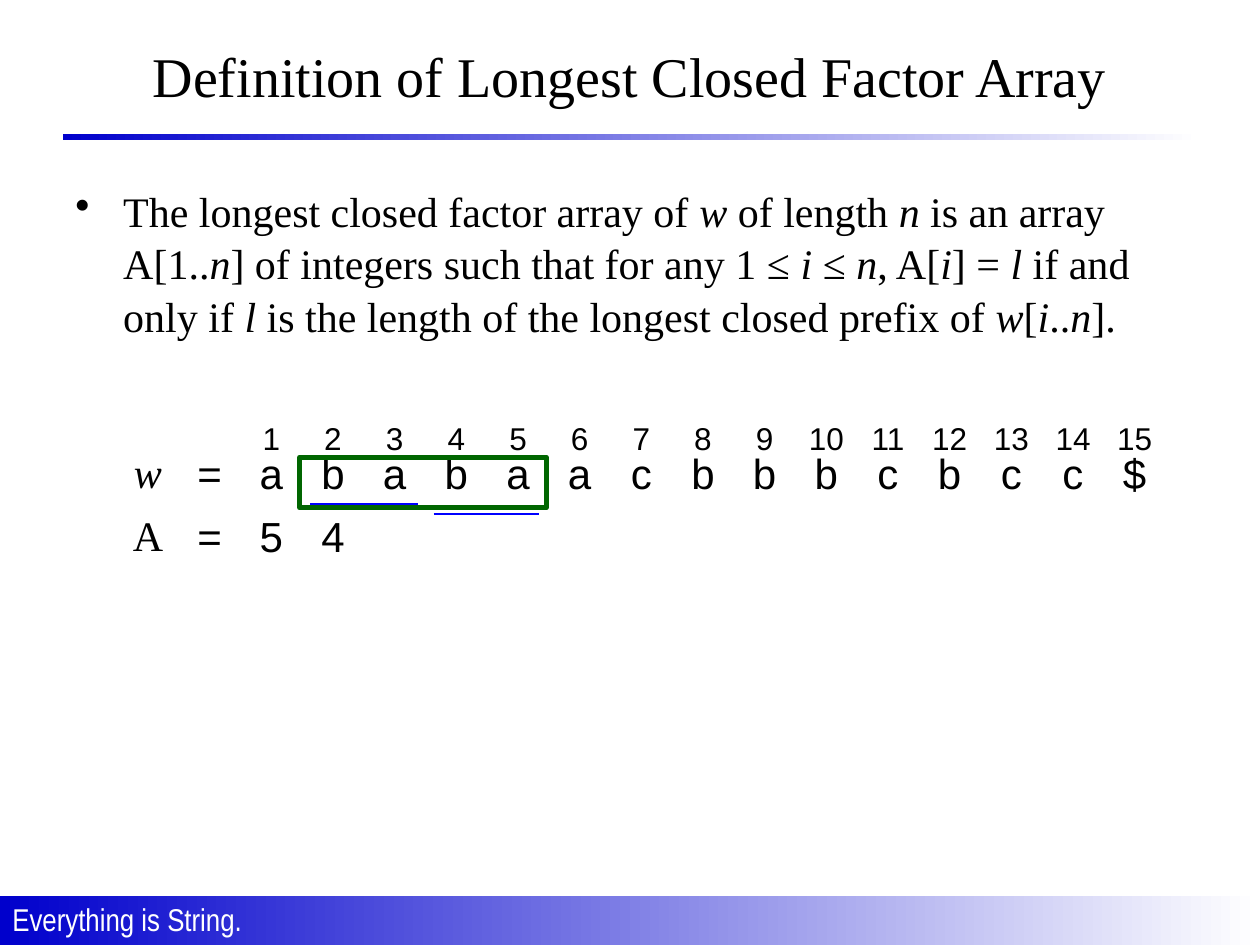
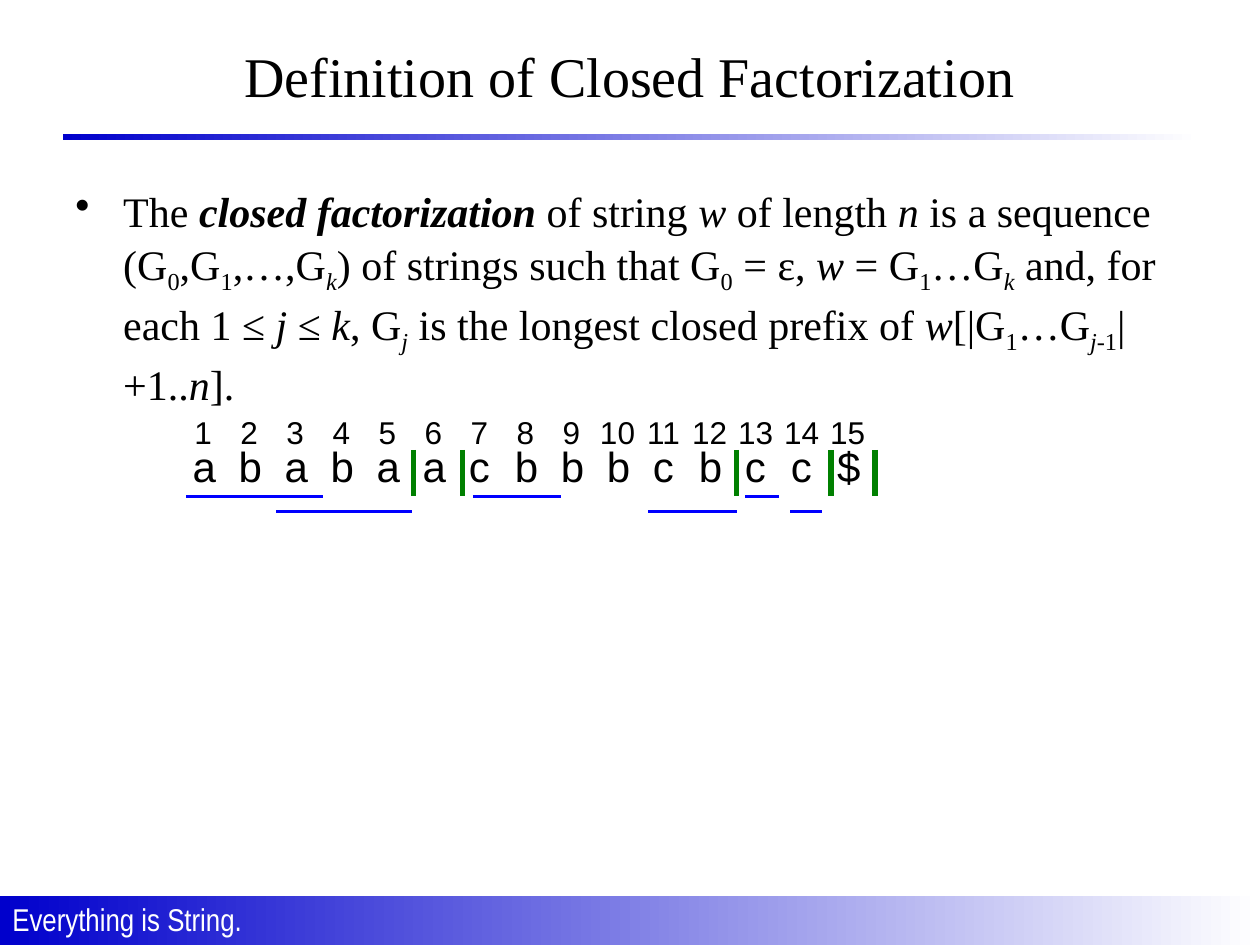
from dataclasses import dataclass

from lxml.etree import SubElement
from pptx import Presentation
from pptx.dml.color import RGBColor
from pptx.enum.shapes import MSO_CONNECTOR as Connector, MSO_SHAPE as Shape
from pptx.enum.text import MSO_ANCHOR as Anchor, PP_ALIGN as Align
from pptx.oxml.ns import qn
from pptx.util import Inches, Pt

BLACK = RGBColor(0x00, 0x00, 0x00)
WHITE = RGBColor(0xFF, 0xFF, 0xFF)
BAND_BLUE = RGBColor(0x00, 0x00, 0xCC)
BORDER_BLUE = RGBColor(0x00, 0x00, 0xFF)
FRAME_GREEN = RGBColor(0x00, 0x66, 0x00)
BAR_GREEN = RGBColor(0x00, 0x80, 0x00)
SERIF, SANS, NARROW = "Times New Roman", "Arial", "Arial Narrow"
WORD = "ababaacbbbcbcc$"
FOOTER = "Everything is String."
INDENT = Inches(0.38)


@dataclass
class Box:
    """A region of the slide in inches."""
    left: float
    top: float
    width: float
    height: float

    def emu(self):
        """Return the four lengths as python-pptx expects them."""
        return [Inches(n) for n in (self.left, self.top, self.width, self.height)]


SLIDE = Box(0, 0, 10, 7.5)
FOOTER_BAND = Box(0, 7.11, SLIDE.width, 0.39)
TITLE_RULE = Box(0.5, 1.06, 9.02, 0.05)
TITLE = Box(0.5, 0.13, 9, 0.93)
BODY = Box(0.5, 1.4, 9, 5.3)
ARRAY_TABLE = Box(0.93, 3.53, 8.32, 0.95)
FACTOR_STRIP = Box(1.48, 3.45, 5.48, 0.5)

ARRAY_DEFINITION = [
    ("The longest closed factor array of ", ""), ("w ", "i"), ("of length ", ""),
    ("n", "i"), (" is an array A[1..", ""), ("n", "i"),
    ("] of integers such that for any 1 ≤ ", ""), ("i ", "i"), ("≤ ", ""),
    ("n", "i"), (", A[", ""), ("i", "i"), ("] = ", ""), ("l", "i"),
    (" if and only if ", ""), ("l", "i"),
    (" is the length of the longest closed prefix of ", ""), ("w", "i"),
    ("[", ""), ("i", "i"), ("..", ""), ("n", "i"), ("].", "")]
FACTORIZATION_DEFINITION = [
    ("The ", ""), ("closed factorization", "bi"), (" of string ", ""), ("w", "i"),
    (" of length ", ""), ("n", "i"), (" is a sequence (G", ""), ("0", "s"),
    (",G", ""), ("1", "s"), (",…,G", ""), ("k", "is"),
    (") of strings such that G", ""), ("0", "s"), (" = ε, ", ""), ("w", "i"),
    (" = G", ""), ("1", "s"), ("…G", ""), ("k", "is"), (" and, for each 1 ≤ ", ""),
    ("j ", "i"), ("≤ ", ""), ("k", "i"), (", G", ""), ("j", "is"),
    (" is the longest closed prefix of ", ""), ("w", "i"), ("[|G", ""), ("1", "s"),
    ("…G", ""), ("j", "is"), ("-1", "s"), ("|+1..", ""), ("n", "i"), ("].", "")]


def style(span, size, name, color=BLACK, italic=False, bold=False):
    """Format one run."""
    font = span.font
    font.size, font.name, font.italic, font.bold = Pt(size), name, italic, bold
    font.color.rgb = color


def add_text(page, box, text, size, name, color=BLACK, align=Align.LEFT,
             anchor=Anchor.TOP, wrap=False):
    """Add a text box with one formatted paragraph."""
    frame = page.shapes.add_textbox(*box.emu()).text_frame
    frame.word_wrap = wrap
    frame.vertical_anchor = anchor
    frame.text = text
    para = frame.paragraphs[0]
    para.alignment = align
    style(para.runs[0], size, name, color)
    return para


def add_line(page, start, end, color, width):
    """Add a straight line without a shadow."""
    ends = [Inches(n) for n in (*start, *end)]
    line = page.shapes.add_connector(Connector.STRAIGHT, *ends)
    line.line.color.rgb = color
    line.line.width = Pt(width)
    SubElement(line._element.spPr, qn("a:effectLst"))


def add_gradient(page, box):
    """Add a band that fades from blue to white."""
    band = page.shapes.add_shape(Shape.RECTANGLE, *box.emu())
    band.shadow.inherit = False
    band.line.fill.background()
    band.fill.gradient()
    band.fill.gradient_angle = 0
    for stop, color in zip(band.fill.gradient_stops, (BAND_BLUE, WHITE)):
        stop.color.rgb = color


def add_definition(page, box, pieces):
    """Add the bulleted definition with its italic, bold and subscript runs."""
    frame = page.shapes.add_textbox(*box.emu()).text_frame
    frame.word_wrap = True
    para = frame.paragraphs[0]
    para.line_spacing = 1.05
    properties = para._p.get_or_add_pPr()
    properties.set("marL", str(INDENT))
    properties.set("indent", str(-INDENT))
    SubElement(properties, qn("a:buChar"), char="•")
    for text, marks in pieces:
        span = para.add_run()
        span.text = text
        style(span, 24, SERIF, italic="i" in marks, bold="b" in marks)
        if "s" in marks:
            span._r.get_or_add_rPr().set("baseline", "-25000")


def add_page(deck, title, pieces):
    """Add a slide with the shared bands, title and definition."""
    page = deck.slides.add_slide(deck.slide_layouts[6])
    add_gradient(page, FOOTER_BAND)
    add_text(page, Box(0, FOOTER_BAND.top - 0.02, 2.22, 0.4), FOOTER, 18, NARROW, WHITE)
    add_gradient(page, TITLE_RULE)
    add_text(page, TITLE, title, 32, SERIF, align=Align.CENTER,
             anchor=Anchor.MIDDLE, wrap=True)
    add_definition(page, BODY, pieces)
    return page


def add_indices(page, left, top, pitch):
    """Number the letters, each number centred over its column."""
    for column in range(len(WORD)):
        number = str(column + 1)
        width = 0.2 + 0.14 * len(number)
        center = left + (column + 0.5) * pitch
        add_text(page, Box(center - width / 2, top, width, 0.4), number, 18, SANS,
                 align=Align.CENTER)


def add_borders(page, box, pitch, spans):
    """Underline borders given as start column, end column and depth."""
    for start, end, depth in spans:
        add_line(page, (box.left + start * pitch, box.top + depth),
                 (box.left + end * pitch, box.top + depth), BORDER_BLUE, 1.5)


def add_array_table(page, box):
    """Add the word and its array, with the closed factor at index 2 framed."""
    rows = [["w", "=", *WORD], ["A", "=", "5", "4"]]
    columns = len(rows[0])
    pitch = box.width / columns
    table = page.shapes.add_table(len(rows), columns, *box.emu()).table
    table.horz_banding = False
    for cell in table.iter_cells():
        cell.fill.background()
    for row, texts in enumerate(rows):
        for column, text in enumerate(texts):
            cell = table.cell(row, column)
            cell.text = text
            para = cell.text_frame.paragraphs[0]
            para.alignment = Align.CENTER
            style(para.runs[0], 24, SANS if column else SERIF, italic=text == "w")
    add_borders(page, box, pitch, [(3.13, 4.88, 0.47), (5.13, 6.84, 0.55)])
    add_indices(page, box.left + 2 * pitch, box.top - 0.25, pitch)
    frame_box = Box(box.left + 2.96 * pitch, box.top + 0.1, 4 * pitch, 0.4)
    frame = page.shapes.add_shape(Shape.RECTANGLE, *frame_box.emu())
    frame.shadow.inherit = False
    frame.fill.background()
    frame.line.color.rgb = FRAME_GREEN
    frame.line.width = Pt(3)


def add_factor_strip(page, box):
    """Add the word cut into closed factors by green bars."""
    pitch = box.width / len(WORD)
    para = add_text(page, Box(box.left - 0.05, box.top, box.width + 0.07, box.height),
                    "\t".join(WORD), 24, SANS)
    stops = SubElement(para._p.get_or_add_pPr(), qn("a:tabLst"))
    for column in range(1, len(WORD)):
        SubElement(stops, qn("a:tab"), pos=str(Inches(column * pitch)), algn="l")
    add_borders(page, box, pitch, [
        (0, 2.96, 0.49), (1.95, 4.9, 0.61), (6.22, 8.14, 0.49),
        (10.03, 11.95, 0.61), (12.14, 12.88, 0.49), (13.12, 13.81, 0.61)])
    for cut in (4.93, 6, 11.95, 14, 14.96):
        across = box.left + cut * pitch
        add_line(page, (across, box.top + 0.12), (across, box.top + 0.49), BAR_GREEN, 3)
    add_indices(page, box.left - 0.05, box.top - 0.22, pitch)


def main():
    """Build and save the deck."""
    deck = Presentation()
    deck.slide_width, deck.slide_height = Inches(SLIDE.width), Inches(SLIDE.height)
    page = add_page(deck, "Definition of Longest Closed Factor Array", ARRAY_DEFINITION)
    add_array_table(page, ARRAY_TABLE)
    page = add_page(deck, "Definition of Closed Factorization", FACTORIZATION_DEFINITION)
    add_factor_strip(page, FACTOR_STRIP)
    deck.save("out.pptx")


if __name__ == "__main__":
    main()
